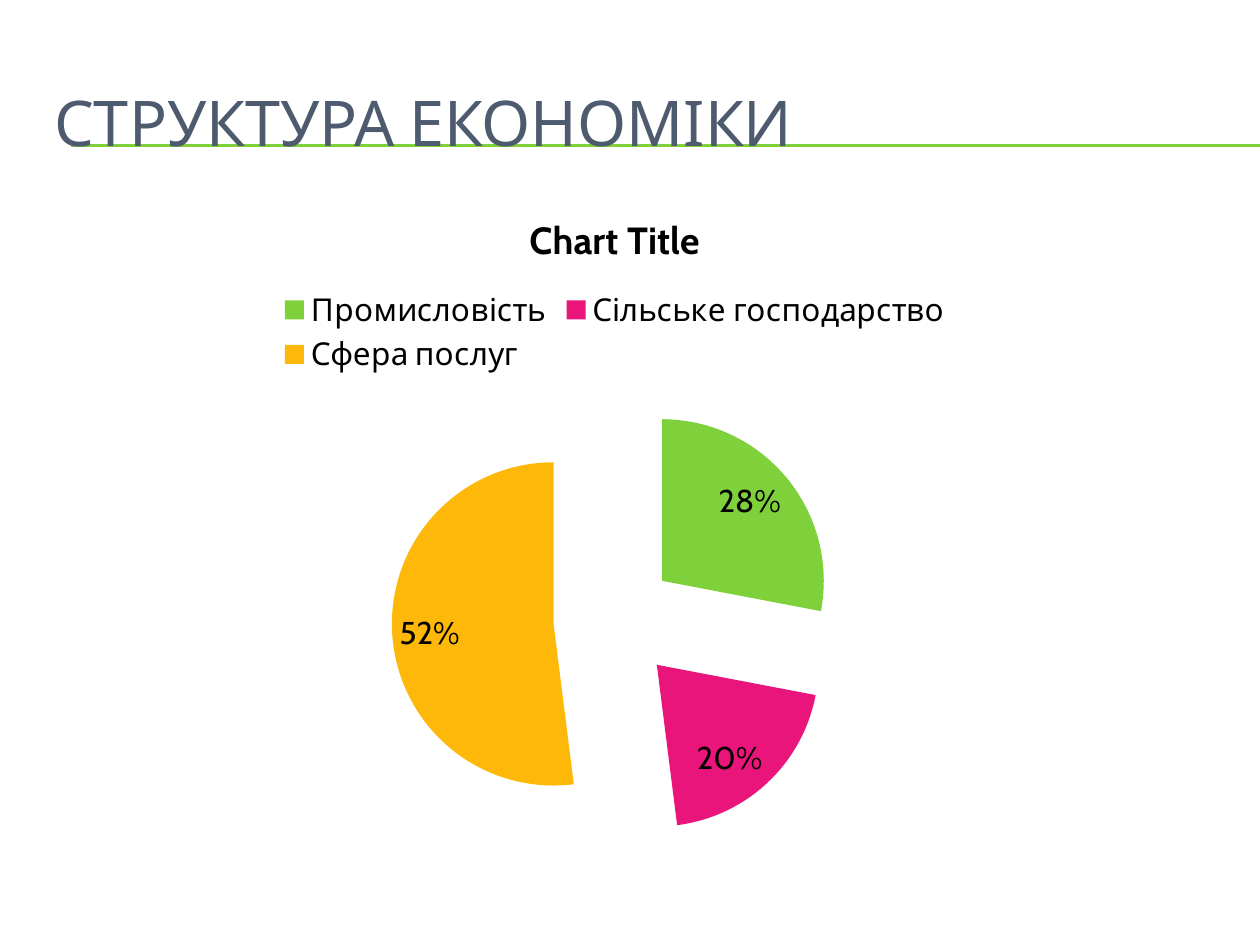
from lxml import etree
from pptx import Presentation
from pptx.chart.data import CategoryChartData
from pptx.dml.color import RGBColor
from pptx.enum.chart import XL_CHART_TYPE as ChartType
from pptx.enum.chart import XL_LABEL_POSITION as LabelPosition
from pptx.enum.chart import XL_LEGEND_POSITION as LegendPosition
from pptx.enum.shapes import MSO_CONNECTOR as Connector
from pptx.enum.text import MSO_ANCHOR as Anchor
from pptx.enum.text import PP_ALIGN as Align
from pptx.oxml.ns import qn
from pptx.util import Inches, Pt

FONT = "Cabin"
SLATE = RGBColor(0x4E, 0x5B, 0x6F)
BLACK = RGBColor(0, 0, 0)
GREEN = RGBColor(0x7F, 0xD1, 0x3B)
PINK = RGBColor(0xEA, 0x15, 0x7A)
AMBER = RGBColor(0xFE, 0xB8, 0x0A)

SECTORS = [
    ("Промисловість", 28, GREEN),
    ("Сільське господарство", 20, PINK),
    ("Сфера послуг", 52, AMBER),
]
EXPLOSION = 38


def style_font(font, size, color, bold=False):
    font.name = FONT
    font.size = Pt(size)
    font.bold = bold
    font.color.rgb = color


def add_rule(slide, y):
    """Horizontal rule to the right edge, kept behind the title."""
    rule = slide.shapes.add_connector(
        Connector.STRAIGHT, Inches(0.56), Inches(y), Inches(10), Inches(y))
    rule.line.color.rgb = GREEN
    rule.line.width = Pt(0.75)
    element = rule._element
    etree.SubElement(element.spPr, qn("a:effectLst"))
    slide.shapes._spTree.insert(2, element)


def set_title(slide, wording):
    title = slide.shapes.title
    title.left, title.top = Inches(0.33), Inches(0.5)
    title.width, title.height = Inches(9.5), Inches(0.92)
    frame = title.text_frame
    frame.text = wording
    frame.vertical_anchor = Anchor.MIDDLE
    heading = frame.paragraphs[0]
    heading.alignment = Align.LEFT
    style_font(heading.font, 36, SLATE)


def explode(series, percent):
    """Pull all slices out from the centre."""
    explosion = etree.Element(qn("c:explosion"), val=str(percent))
    series._element.find(qn("c:tx")).addnext(explosion)


def add_economy_pie(slide):
    data = CategoryChartData()
    data.categories = [name for name, _, _ in SECTORS]
    data.add_series("Series 1", [share for _, share, _ in SECTORS])
    chart = slide.shapes.add_chart(
        ChartType.PIE, Inches(0.78), Inches(1.48), Inches(8.2), Inches(5.35),
        data).chart
    style_font(chart.font, 18, BLACK)

    # Heading and legend
    chart.has_title = True
    chart.chart_title.include_in_layout = False
    heading = chart.chart_title.text_frame
    heading.text = "Chart Title"
    style_font(heading.paragraphs[0].font, 21.6, BLACK, bold=True)
    chart.has_legend = True
    chart.legend.position = LegendPosition.TOP
    chart.legend.include_in_layout = False

    # Slices
    pie = chart.plots[0]
    pie.vary_by_categories = True
    shares = pie.series[0]
    explode(shares, EXPLOSION)
    for index, (_, _, color) in enumerate(SECTORS):
        fill = shares.points[index].format.fill
        fill.solid()
        fill.fore_color.rgb = color

    # Percentages
    labels = shares.data_labels
    labels.show_percentage = True
    labels.show_value = False
    labels.number_format = "0%"
    labels.number_format_is_linked = False
    labels.position = LabelPosition.INSIDE_END
    style_font(labels.font, 18, BLACK)


def main():
    deck = Presentation()
    deck.slide_width, deck.slide_height = Inches(10), Inches(7.5)
    slide = deck.slides.add_slide(deck.slide_layouts[5])
    for y in (1.15, 1.16):
        add_rule(slide, y)
    set_title(slide, "СТРУКТУРА ЕКОНОМІКИ")
    add_economy_pie(slide)
    deck.save("out.pptx")


if __name__ == "__main__":
    main()
